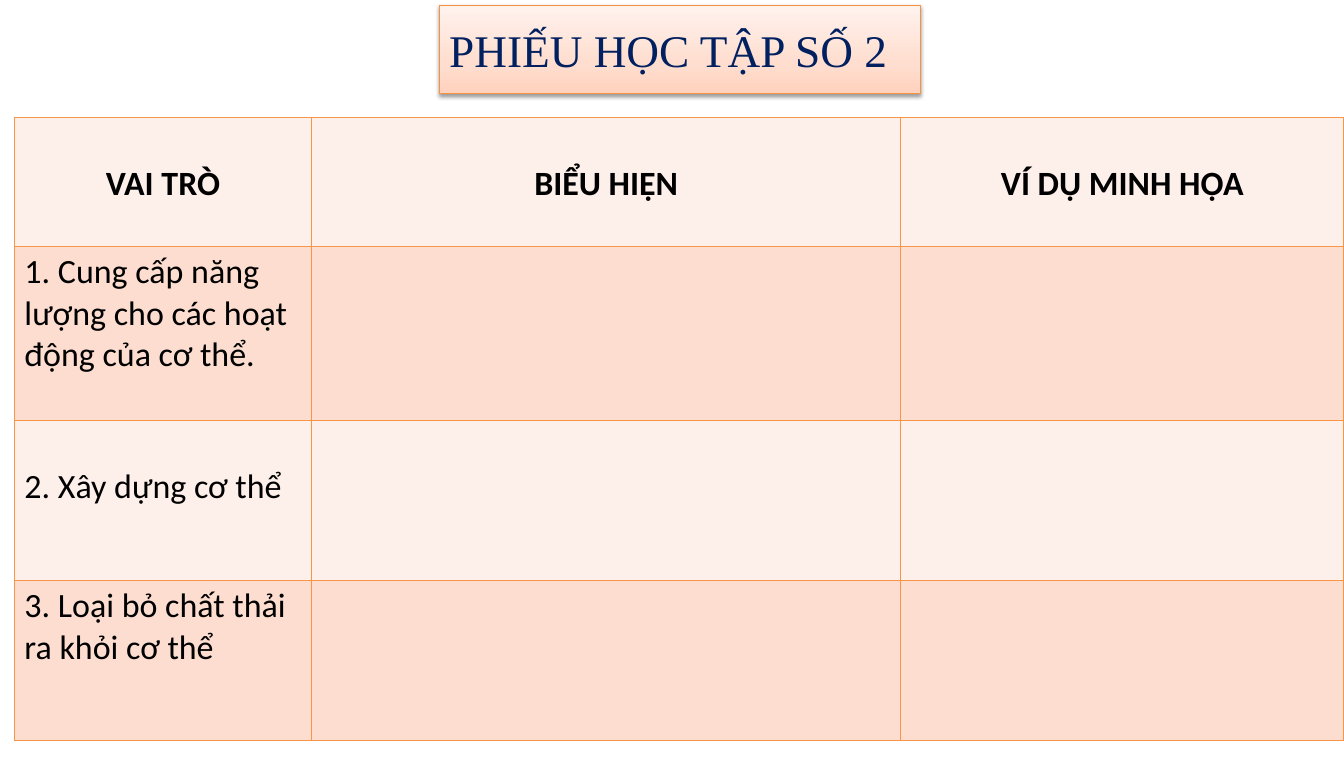
from lxml import etree
from pptx import Presentation
from pptx.dml.color import RGBColor
from pptx.enum.shapes import MSO_SHAPE as SHAPE
from pptx.enum.text import MSO_ANCHOR as ANCHOR, PP_ALIGN as ALIGN
from pptx.oxml.ns import qn
from pptx.util import Inches, Pt


def rgb(code):
    return RGBColor.from_string(code)


def add_xml(parent, tag, **attrs):
    return etree.SubElement(parent, qn(tag), attrs)


prs = Presentation()
prs.slide_width, prs.slide_height = Inches(13.19), Inches(7.5)
s = prs.slides.add_slide(prs.slide_layouts[6])

# Title box
sp = s.shapes.add_shape(SHAPE.RECTANGLE, Inches(4.31), Inches(0.05), Inches(4.72), Inches(0.87))
sp.line.color.rgb = rgb("F69240")
sp.line.width = Pt(0.75)

# Title gradient, darker at the bottom
sp.fill.gradient()
sp.fill.gradient_angle = 90
stops = sp._element.spPr.find(".//" + qn("a:gsLst"))
for stop in list(stops):
    stops.remove(stop)
for percent, color in [(0, "FFD2BD"), (35, "FFDED0"), (100, "FFF2ED")]:
    stop = add_xml(stops, "a:gs", pos=str(percent * 1000))
    add_xml(stop, "a:srgbClr", val=color)

# Title shadow
sp.shadow.inherit = False
effects = sp._element.spPr.find(qn("a:effectLst"))
shadow = add_xml(effects, "a:outerShdw", blurRad=str(Pt(3.1)), dist=str(Pt(1.6)),
                 dir="5400000", rotWithShape="0")
add_xml(add_xml(shadow, "a:srgbClr", val="000000"), "a:alpha", val="38000")

# Title text
tf = sp.text_frame
tf.word_wrap = True
tf.vertical_anchor = ANCHOR.MIDDLE
p = tf.paragraphs[0]
p.alignment = ALIGN.LEFT
r = p.add_run()
r.text = "PHIẾU HỌC TẬP SỐ 2"
r.font.name = "Times New Roman"
r.font.size = Pt(32)
r.font.color.rgb = rgb("002060")

# Worksheet table
col_widths = [2.92, 5.78, 4.35]
row_heights = [1.27, 1.71, 1.57, 1.57]
row_margins = [0.45, 0.05, 0.45, 0.05]
rows = [
    ["VAI TRÒ", "BIỂU HIỆN", "VÍ DỤ MINH HỌA"],
    ["1. Cung cấp năng lượng cho các hoạt động của cơ thể.", "", ""],
    ["2. Xây dựng cơ thể", "", ""],
    ["3. Loại bỏ chất thải ra khỏi cơ thể", "", ""],
]
table = s.shapes.add_table(len(rows), len(col_widths), Inches(0.14), Inches(1.15),
                           Inches(sum(col_widths)), Inches(sum(row_heights))).table
for col, width in zip(table.columns, col_widths):
    col.width = Inches(width)
for row, height in zip(table.rows, row_heights):
    row.height = Inches(height)

for i, texts in enumerate(rows):
    for j, text in enumerate(texts):
        cell = table.cell(i, j)
        cell.margin_top = Inches(row_margins[i])
        # Borders come before the fill in the cell properties
        for side in ("a:lnL", "a:lnR", "a:lnT", "a:lnB"):
            border = add_xml(cell._tc.get_or_add_tcPr(), side, w=str(Pt(1)))
            add_xml(add_xml(border, "a:solidFill"), "a:srgbClr", val="F79646")
        cell.fill.solid()
        cell.fill.fore_color.rgb = rgb("FCDDCF" if i % 2 else "FDEFE9")
        if text:
            p = cell.text_frame.paragraphs[0]
            p.alignment = ALIGN.LEFT if i else ALIGN.CENTER
            r = p.add_run()
            r.text = text
            r.font.name = "Calibri"
            r.font.size = Pt(24)
            r.font.bold = i == 0
            r.font.color.rgb = rgb("000000")

prs.save("out.pptx")
